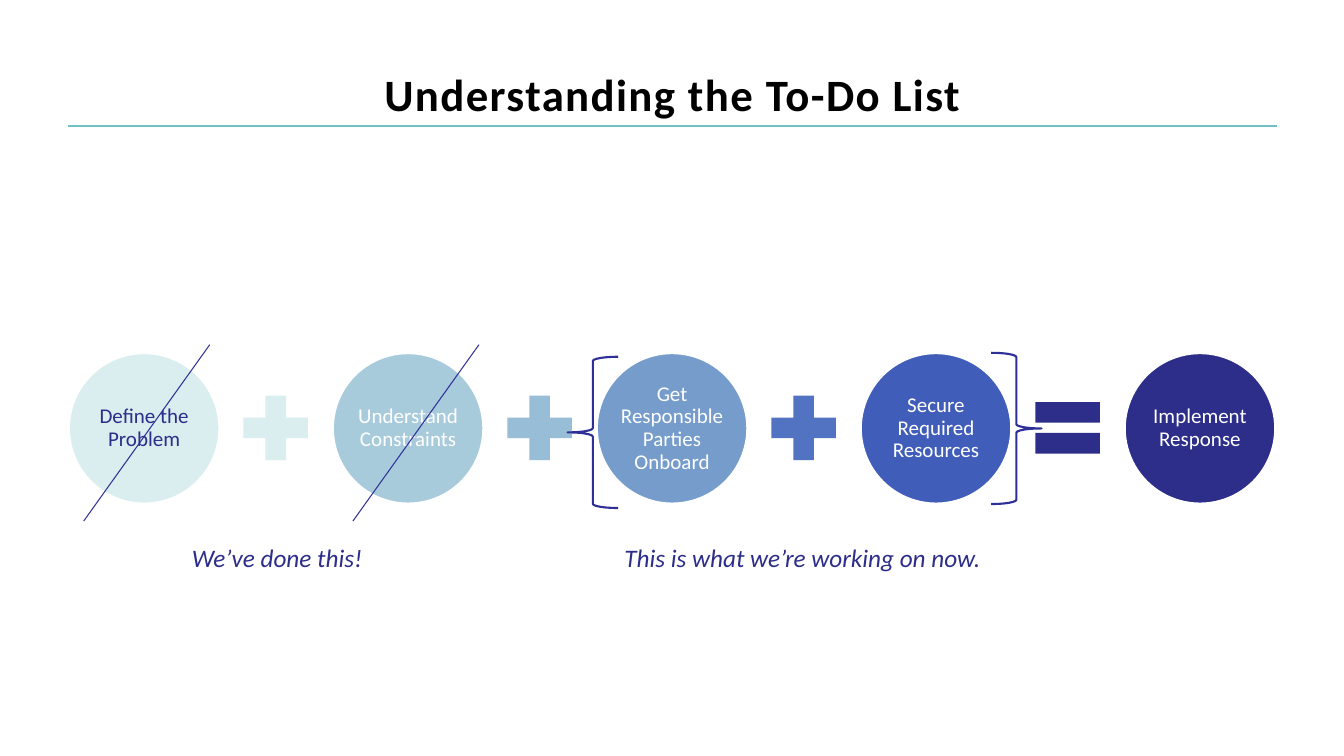
from pptx import Presentation
from pptx import util as u
from pptx.dml import color
from pptx.enum import shapes, text
from pptx.oxml import ns
from lxml import etree

HEX = {"black": "000000", "white": "FFFFFF", "teal": "72BFC5", "mint": "DAEDEF",
       "sky": "A8CBDC", "mist": "98BDD6", "steel": "759CCB", "azure": "5273C1",
       "blue": "415DBA", "navy": "2D2D8A", "ink": "2F2F98"}
KIND = shapes.MSO_SHAPE


def rgb(name):
    return color.RGBColor.from_string(HEX[name])


def style(para, size, tint):
    para.alignment = text.PP_ALIGN.CENTER
    font = para.runs[0].font
    font.name, font.size = "Calibri", u.Pt(size)
    font.color.rgb = rgb(tint)
    return font


deck = Presentation()
deck.slide_width, deck.slide_height = u.Inches(13.33), u.Inches(7.5)
slide = deck.slides.add_slide(deck.slide_layouts[5])
items = slide.shapes

# Title
title = items.title
title.left, title.top = u.Inches(0.67), u.Inches(0.3)
title.width, title.height = u.Inches(12), u.Inches(1.25)
frame = title.text_frame
frame.text = "Understanding the To-Do List"
frame.vertical_anchor = text.MSO_ANCHOR.MIDDLE
font = style(frame.paragraphs[0], 32, "black")
font.bold = True
frame.paragraphs[0].runs[0]._r.get_or_add_rPr().set("spc", "100")

# Steps, each followed by its sign
steps = [
    ("Define the Problem", "mint", "navy", KIND.MATH_PLUS, "mint"),
    ("Understand Constraints", "sky", "white", KIND.MATH_PLUS, "mist"),
    ("Get Responsible Parties Onboard", "steel", "white", KIND.MATH_PLUS, "azure"),
    ("Secure Required Resources", "blue", "white", KIND.MATH_EQUAL, "navy"),
    ("Implement Response", "navy", "white", None, None),
]
for i, (label, fill, tint, sign, shade) in enumerate(steps):
    left = 0.68 + 2.618 * i
    disc = items.add_shape(KIND.OVAL, u.Inches(left), u.Inches(3.5),
                           u.Inches(1.5), u.Inches(1.5))
    disc.shadow.inherit = False
    disc.fill.solid()
    disc.fill.fore_color.rgb = rgb(fill)
    disc.line.color.rgb = rgb("white")
    disc.line.width = u.Pt(2)
    frame = disc.text_frame
    frame.word_wrap = True
    frame.vertical_anchor = text.MSO_ANCHOR.MIDDLE
    frame.margin_left = frame.margin_right = u.Inches(0.02)
    frame.margin_top = frame.margin_bottom = u.Inches(0.02)
    frame.text = label
    frame.paragraphs[0].line_spacing = 0.9
    style(frame.paragraphs[0], 15, tint)
    if sign:
        mark = items.add_shape(sign, u.Inches(left + 1.62), u.Inches(3.81),
                               u.Inches(0.87), u.Inches(0.87))
        mark.shadow.inherit = False
        mark.fill.solid()
        mark.fill.fore_color.rgb = rgb(shade)
        mark.line.fill.background()

# Title rule and the strokes through finished steps
for x1, y1, x2, y2, tint, width in [
    (0.67, 1.25, 12.67, 1.25, "teal", 1),
    (2.08, 3.42, 0.83, 5.17, "ink", 0.75),
    (4.75, 3.42, 3.5, 5.17, "ink", 0.75),
]:
    line = items.add_connector(shapes.MSO_CONNECTOR.STRAIGHT, u.Inches(x1),
                               u.Inches(y1), u.Inches(x2), u.Inches(y2))
    line.line.color.rgb = rgb(tint)
    line.line.width = u.Pt(width)
    etree.SubElement(line._element.spPr, ns.qn("a:effectLst"))

# Braces around the current steps
for left, top, turn in [(5.63, 3.54, 0), (9.83, 3.5, 180)]:
    brace = items.add_shape(KIND.LEFT_BRACE, u.Inches(left), u.Inches(top),
                            u.Inches(0.5), u.Inches(1.5))
    brace.rotation = turn
    brace.shadow.inherit = False
    brace.fill.background()
    brace.line.color.rgb = rgb("ink")
    brace.line.width = u.Pt(1.5)

# Captions
for left, width, words in [
    (1.77, 1.96, "We’ve done this!"),
    (5.25, 5.42, "This is what we’re working on now."),
]:
    box = items.add_textbox(u.Inches(left), u.Inches(5.33),
                            u.Inches(width), u.Inches(0.4))
    box.text_frame.word_wrap = True
    box.text_frame.text = words
    style(box.text_frame.paragraphs[0], 18, "navy").italic = True

deck.save("out.pptx")
